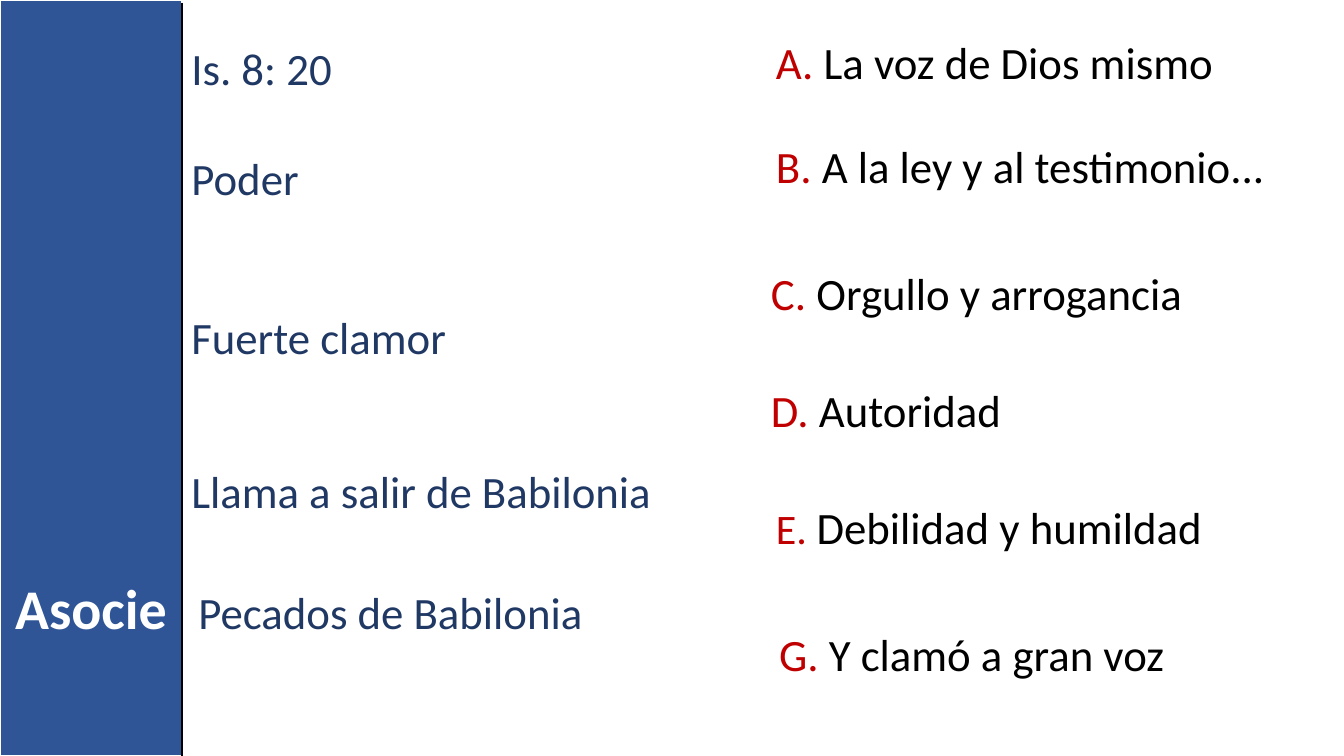
from lxml.etree import SubElement
from pptx import Presentation
from pptx.dml.color import RGBColor as RGB
from pptx.enum.shapes import MSO_CONNECTOR as LINK, MSO_SHAPE as SHAPE
from pptx.enum.text import MSO_AUTO_SIZE as FIT, PP_ALIGN as ALIGN
from pptx.oxml.ns import qn
from pptx.util import Pt

BLUE = RGB(0x2F, 0x55, 0x97)
NAVY = RGB(0x20, 0x38, 0x64)
RED = RGB(0xC0, 0x00, 0x00)
BLACK = RGB(0x00, 0x00, 0x00)
WHITE = RGB(0xFF, 0xFF, 0xFF)

WIDE, HIGH = 960, 540
BAND = 130

TERM = {"size": Pt(32), "name": "Calibri"}
TITLE = {"size": Pt(40), "name": "Calibri", "bold": True}

deck = Presentation()
deck.slide_width, deck.slide_height = Pt(WIDE), Pt(HIGH)
slide = deck.slides.add_slide(deck.slide_layouts[6])
shapes = slide.shapes


def label(left, top, width, height, runs, align=ALIGN.LEFT):
    box = shapes.add_textbox(Pt(left), Pt(top), Pt(width), Pt(height))
    frame = box.text_frame
    frame.word_wrap = True
    frame.auto_size = FIT.SHAPE_TO_FIT_TEXT
    para = frame.paragraphs[0]
    para.alignment = align
    for text, color, style in runs:
        run = para.add_run()
        run.text = text
        for key, value in style.items():
            setattr(run.font, key, value)
        run.font.color.rgb = color


band = shapes.add_shape(SHAPE.RECTANGLE, 0, 0, Pt(BAND), Pt(HIGH))
band.shadow.inherit = False
band.fill.solid()
band.fill.fore_color.rgb = BLUE
band.line.color.rgb = WHITE
band.line.width = Pt(1.5)

terms = [
    ("Is. 8: 20", 129.6, 25.2, 329),
    ("Poder", 129.6, 104.4, 386),
    ("Fuerte clamor", 129.6, 217.4, 372),
    ("Llama a salir de Babilonia", 129.6, 327.6, 361),
    ("Pecados de Babilonia", 134.6, 414, 318),
]
for text, left, top, width in terms:
    label(left, top, width, 46, [(text, NAVY, TERM)])

answers = [
    ("A. ", "La voz de Dios mismo", 547.2, 20.9, 402, 32),
    ("B. ", "A la ley y al testimonio...", 547.2, 95.8, 395, 32),
    ("C. ", "Orgullo y arrogancia", 543.6, 186.5, 397, 32),
    ("D. ", "Autoridad", 543.6, 270, 402, 32),
    ("E. ", "Debilidad y humildad", 547.2, 353.5, 395, 30),
    ("G. ", "Y clamó a gran voz", 549.4, 444.2, 374, 32),
]
for mark, text, left, top, width, size in answers:
    runs = [(mark, RED, {**TERM, "size": Pt(size)}), (text, BLACK, TERM)]
    label(left, top, width, 46, runs)

label(0, 406, BAND, 55.4, [("Asocie", WHITE, TITLE)], ALIGN.CENTER)

edge = shapes.add_connector(LINK.STRAIGHT, Pt(BAND), Pt(2), Pt(BAND), Pt(HIGH))
edge.line.color.rgb = BLACK
edge.line.width = Pt(1)
SubElement(edge._element.spPr, qn("a:effectLst"))

deck.save("out.pptx")
